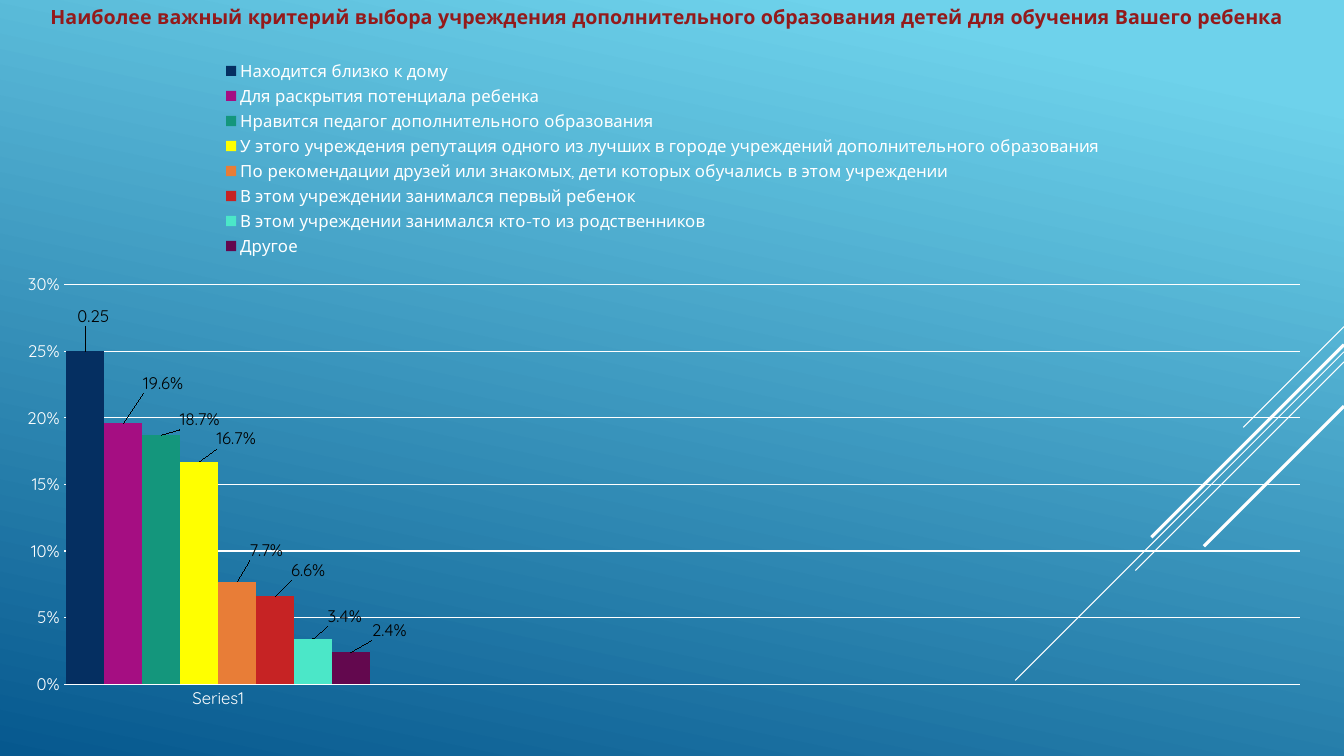
from lxml.etree import SubElement
from pptx import Presentation
from pptx.chart.data import CategoryChartData
from pptx.dml.color import RGBColor
from pptx.enum.chart import XL_CHART_TYPE, XL_LABEL_POSITION, XL_LEGEND_POSITION, XL_TICK_MARK
from pptx.enum.shapes import MSO_CONNECTOR
from pptx.enum.text import MSO_ANCHOR, PP_ALIGN
from pptx.oxml import parse_xml
from pptx.oxml.ns import nsdecls, qn
from pptx.util import Inches, Pt

WIDE, HIGH = Inches(13.33), Inches(7.5)
FACE = "Quicksand"
WHITE = RGBColor(0xFF, 0xFF, 0xFF)
BLACK = RGBColor(0x00, 0x00, 0x00)
RED = RGBColor(0x94, 0x1A, 0x1B)
SKY = RGBColor(0x6E, 0xD2, 0xEB)
DEEP = RGBColor(0x06, 0x58, 0x8E)
NAVY = RGBColor(0x05, 0x2F, 0x61)
PINK = RGBColor(0xA5, 0x0E, 0x82)
GREEN = RGBColor(0x14, 0x96, 0x7C)
YELLOW = RGBColor(0xFF, 0xFF, 0x00)
ORANGE = RGBColor(0xE8, 0x7D, 0x37)
BRICK = RGBColor(0xC6, 0x23, 0x24)
MINT = RGBColor(0x4B, 0xE7, 0xC8)
PLUM = RGBColor(0x63, 0x08, 0x4E)

TITLE = ("Наиболее важный критерий выбора учреждения дополнительного "
         "образования детей для обучения Вашего ребенка")
REASONS = [
    ("Находится близко к дому", 0.25, NAVY, "General", 0.006, -0.031),
    ("Для раскрытия потенциала ребенка", 0.196, PINK, "0.0%", 0.03, -0.038),
    ("Нравится педагог дополнительного образования",
     0.187, GREEN, "0.0%", 0.029, -0.002),
    ("У этого учреждения репутация одного из лучших в городе "
     "учреждений дополнительного образования",
     0.167, YELLOW, "0.0%", 0.028, -0.013),
    ("По рекомендации друзей или знакомых, дети которых "
     "обучались в этом учреждении", 0.077, ORANGE, "0.0%", 0.022, -0.025),
    ("В этом учреждении занимался первый ребенок",
     0.066, BRICK, "0.0%", 0.025, -0.018),
    ("В этом учреждении занимался кто-то из родственников",
     0.034, MINT, "0.0%", 0.024, -0.013),
    ("Другое", 0.024, PLUM, "0.0%", 0.029, -0.012),
]
STREAKS = [(3.24, 1, 0.75), (3.49, 3.26, 0.75), (3.59, 2.07, 0.75),
           (3.42, 1.91, 2.25), (4.03, 1.39, 2.25)]


def set_font(font, size=12, color=WHITE, bold=False):
    font.name = FACE
    font.size = Pt(size)
    font.bold = bold
    font.color.rgb = color


def put_text(frame, text, align=PP_ALIGN.CENTER, **style):
    frame.word_wrap = True
    frame.vertical_anchor = MSO_ANCHOR.MIDDLE
    frame.margin_top = frame.margin_bottom = 0
    para = frame.paragraphs[0]
    para.alignment = align
    run = para.add_run()
    run.text = text
    set_font(run.font, **style)


def make_layout(**parts):
    layout = parse_xml(f"<c:layout {nsdecls('c')}><c:manualLayout/></c:layout>")
    for tag, val in parts.items():
        SubElement(layout[0], qn(f"c:{tag}")).set("val", str(val))
    return layout


def paint_back(slide):
    fill = slide.background.fill
    fill.gradient()
    fill.gradient_angle = 258
    for stop, place, color in zip(fill.gradient_stops, (0.1, 1), (SKY, DEEP)):
        stop.position = place
        stop.color.rgb = color


def draw_streaks(slide, right):
    for top, run, weight in STREAKS:
        line = slide.shapes.add_connector(
            MSO_CONNECTOR.STRAIGHT, right, Inches(top),
            right - Inches(run), Inches(top + run))
        line.line.color.rgb = WHITE
        line.line.width = Pt(weight)
        SubElement(line.element.spPr, qn("a:effectLst"))


def place_title(slide, left, top, width, height):
    title = slide.shapes.title
    title.left, title.top, title.width, title.height = left, top, width, height
    put_text(title.text_frame, TITLE, size=14, color=RED, bold=True)


def format_axis(axis):
    axis.major_tick_mark = axis.minor_tick_mark = XL_TICK_MARK.NONE
    axis.format.line.fill.background()
    set_font(axis.tick_labels.font)


def label_bar(series, code, right, down):
    label = series.points[0].data_label
    set_font(label.font, color=BLACK)
    label.position = XL_LABEL_POSITION.OUTSIDE_END
    idx = series._element.find(f".//{qn('c:dLbl')}/{qn('c:idx')}")
    idx.addnext(parse_xml(
        f"<c:numFmt {nsdecls('c')} formatCode='{code}' sourceLinked='0'/>"))
    idx.addnext(make_layout(x=right, y=down))


def add_bars(slide, left, top, width, height):
    data = CategoryChartData(number_format="0.0%")
    data.categories = ["Series1", "", "", ""]
    for name, share, *_ in REASONS:
        data.add_series(name, [share, None, None, None])
    chart = slide.shapes.add_chart(
        XL_CHART_TYPE.COLUMN_CLUSTERED, left, top, width, height, data).chart
    set_font(chart.font, size=10)
    chart.has_title = False
    chart.has_legend = True
    chart.legend.position = XL_LEGEND_POSITION.TOP
    chart.legend.include_in_layout = False
    set_font(chart.legend.font)

    plot = chart.plots[0]
    plot.gap_width = 15
    plot.overlap = 0
    plot.vary_by_categories = False
    for series, (_, _, color, code, right, down) in zip(plot.series, REASONS):
        series.format.fill.solid()
        series.format.fill.fore_color.rgb = color
        label_bar(series, code, right, down)

    format_axis(chart.category_axis)
    scale = chart.value_axis
    format_axis(scale)
    scale.minimum_scale, scale.maximum_scale, scale.major_unit = 0, 0.3, 0.05
    scale.tick_labels.number_format = "0%"
    scale.tick_labels.number_format_is_linked = False
    grid = scale.major_gridlines.format.line
    grid.color.rgb = WHITE
    grid.width = Pt(0.75)

    area = chart._chartSpace.chart.plotArea
    for old in area.findall(qn("c:layout")):
        area.remove(old)
    area.insert(0, make_layout(
        layoutTarget="inner", xMode="edge", yMode="edge",
        x=0.048, y=0.35, w=0.932, h=0.594))


def main():
    deck = Presentation()
    deck.slide_width, deck.slide_height = WIDE, HIGH
    slide = deck.slides.add_slide(deck.slide_layouts[5])
    paint_back(slide)
    draw_streaks(slide, WIDE)
    add_bars(slide, 0, int(HIGH * 0.065), int(WIDE * 0.987), int(HIGH * 0.89))
    place_title(slide, int(WIDE * 0.006), 0, int(WIDE * 0.98), int(HIGH * 0.045))
    deck.save("out.pptx")


if __name__ == "__main__":
    main()
